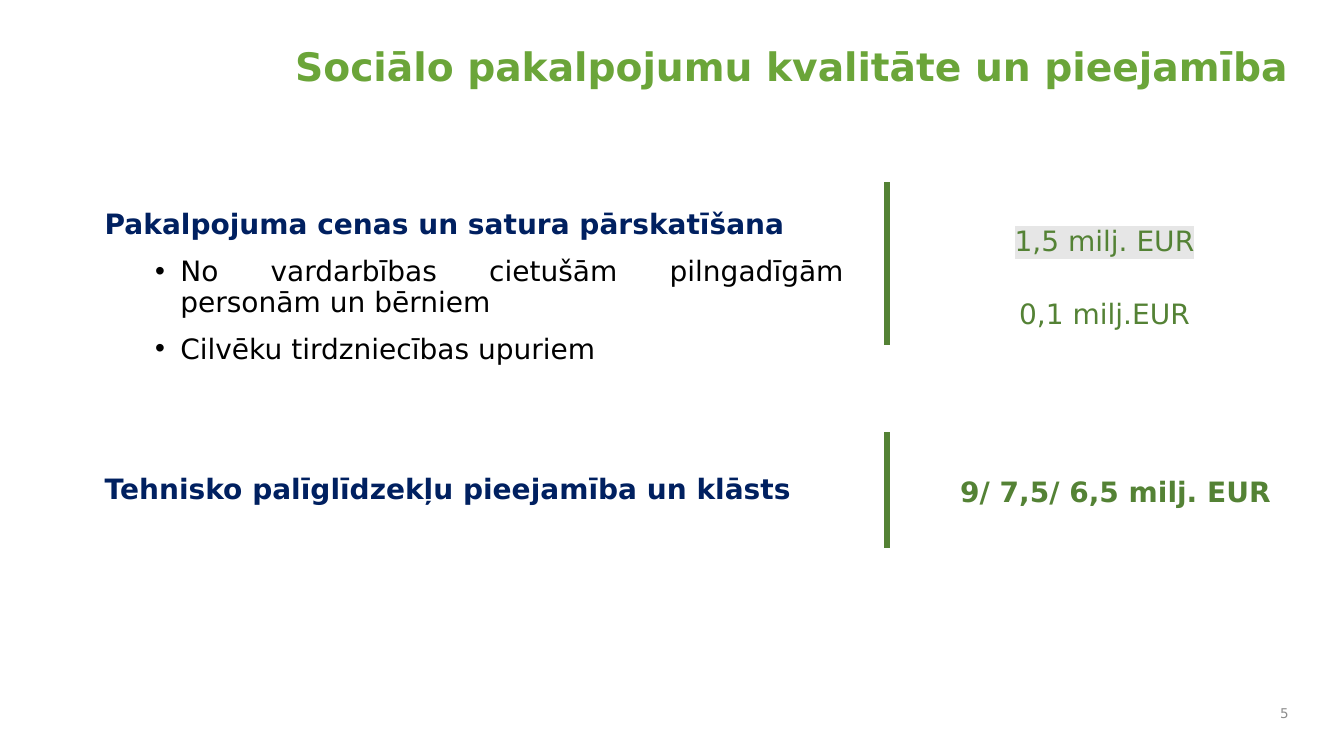
"""Builds a slide on the quality and availability of social services."""
from lxml import etree
from pptx import Presentation
from pptx.dml.color import RGBColor
from pptx.enum.shapes import MSO_CONNECTOR
from pptx.enum.text import MSO_ANCHOR, PP_ALIGN
from pptx.oxml.ns import qn
from pptx.util import Inches, Pt

LEFT, CENTER, RIGHT, JUSTIFY = (
    PP_ALIGN.LEFT, PP_ALIGN.CENTER, PP_ALIGN.RIGHT, PP_ALIGN.JUSTIFY)
TOP, MIDDLE = MSO_ANCHOR.TOP, MSO_ANCHOR.MIDDLE
STRAIGHT = MSO_CONNECTOR.STRAIGHT

TITLE_GREEN, GREEN, NAVY = "6BA539", "548235", "002060"
BLACK, GRAY, HIGHLIGHT = "000000", "8C8C8C", "E6E6E6"


def rgb(value):
    return RGBColor.from_string(value)


class SlideBuilder:
    font = "DejaVu Sans"

    def __init__(self, prs):
        self.s = prs.slides.add_slide(prs.slide_layouts[6])

    def box(self, x, y, w, h, anchor=TOP):
        sp = self.s.shapes.add_textbox(Inches(x), Inches(y), Inches(w), Inches(h))
        tf = sp.text_frame
        tf.word_wrap = True
        tf.vertical_anchor = anchor
        return tf

    def para(self, tf, text, color, size=20, bold=False, align=LEFT,
             before=0, bullet=False, highlight=None):
        p = tf.paragraphs[0]
        if p.runs:
            p = tf.add_paragraph()
        if bullet:
            self.bullet(p)
        p.alignment = align
        p.line_spacing = 0.9
        p.space_before = Pt(before)
        r = p.add_run()
        r.text = text
        r.font.name = self.font
        r.font.size = Pt(size)
        r.font.bold = bold
        r.font.color.rgb = rgb(color)
        if highlight:
            self.highlight(r, highlight)

    def bullet(self, p):
        pPr = p._p.get_or_add_pPr()
        pPr.set("lvl", "1")
        pPr.set("marL", str(Inches(0.75)))
        pPr.set("indent", str(Inches(-0.25)))
        etree.SubElement(pPr, qn("a:buFont")).set("typeface", "Arial")
        etree.SubElement(pPr, qn("a:buChar")).set("char", "•")

    def highlight(self, r, color):
        mark = etree.Element(qn("a:highlight"))
        etree.SubElement(mark, qn("a:srgbClr")).set("val", color)
        r._r.rPr.find(qn("a:solidFill")).addnext(mark)

    def divider(self, x, top, bottom):
        line = self.s.shapes.add_connector(
            STRAIGHT, Inches(x), Inches(top), Inches(x), Inches(bottom))
        line.line.color.rgb = rgb(GREEN)
        line.line.width = Pt(4.5)
        etree.SubElement(line._element.spPr, qn("a:effectLst"))


def main():
    prs = Presentation()
    prs.slide_width, prs.slide_height = Inches(13.33), Inches(7.5)
    b = SlideBuilder(prs)

    title = b.box(2.83, 0.42, 10.17, 1.13)
    b.para(title, "Sociālo pakalpojumu kvalitāte un pieejamība",
           TITLE_GREEN, size=28, bold=True)

    body = b.box(0.94, 2.04, 7.53, 5.35)
    b.para(body, "Pakalpojuma cenas un satura pārskatīšana", NAVY,
           bold=True, align=JUSTIFY)
    for item in ("No vardarbības cietušām pilngadīgām personām un bērniem",
                 "Cilvēku tirdzniecības upuriem"):
        b.para(body, item, BLACK, align=JUSTIFY, before=12, bullet=True)
    b.para(body, "Tehnisko palīglīdzekļu pieejamība un klāsts", NAVY,
           bold=True, align=JUSTIFY, before=78.5)

    number = b.box(12.44, 6.92, 0.44, 0.33, anchor=MIDDLE)
    b.para(number, "5", GRAY, size=9.6, align=RIGHT)

    review_costs = b.box(9.02, 2.21, 3.87, 1.2)
    b.para(review_costs, "1,5 milj. EUR", GREEN, align=CENTER, highlight=HIGHLIGHT)
    b.para(review_costs, "0,1 milj.EUR", GREEN, align=CENTER, before=30)

    aid_costs = b.box(9.13, 4.7, 3.87, 0.9)
    b.para(aid_costs, "9/ 7,5/ 6,5 milj. EUR", GREEN, bold=True, align=CENTER)

    for top, bottom in ((1.81, 3.42), (4.29, 5.44)):
        b.divider(8.8, top, bottom)

    prs.save("out.pptx")


if __name__ == "__main__":
    main()
